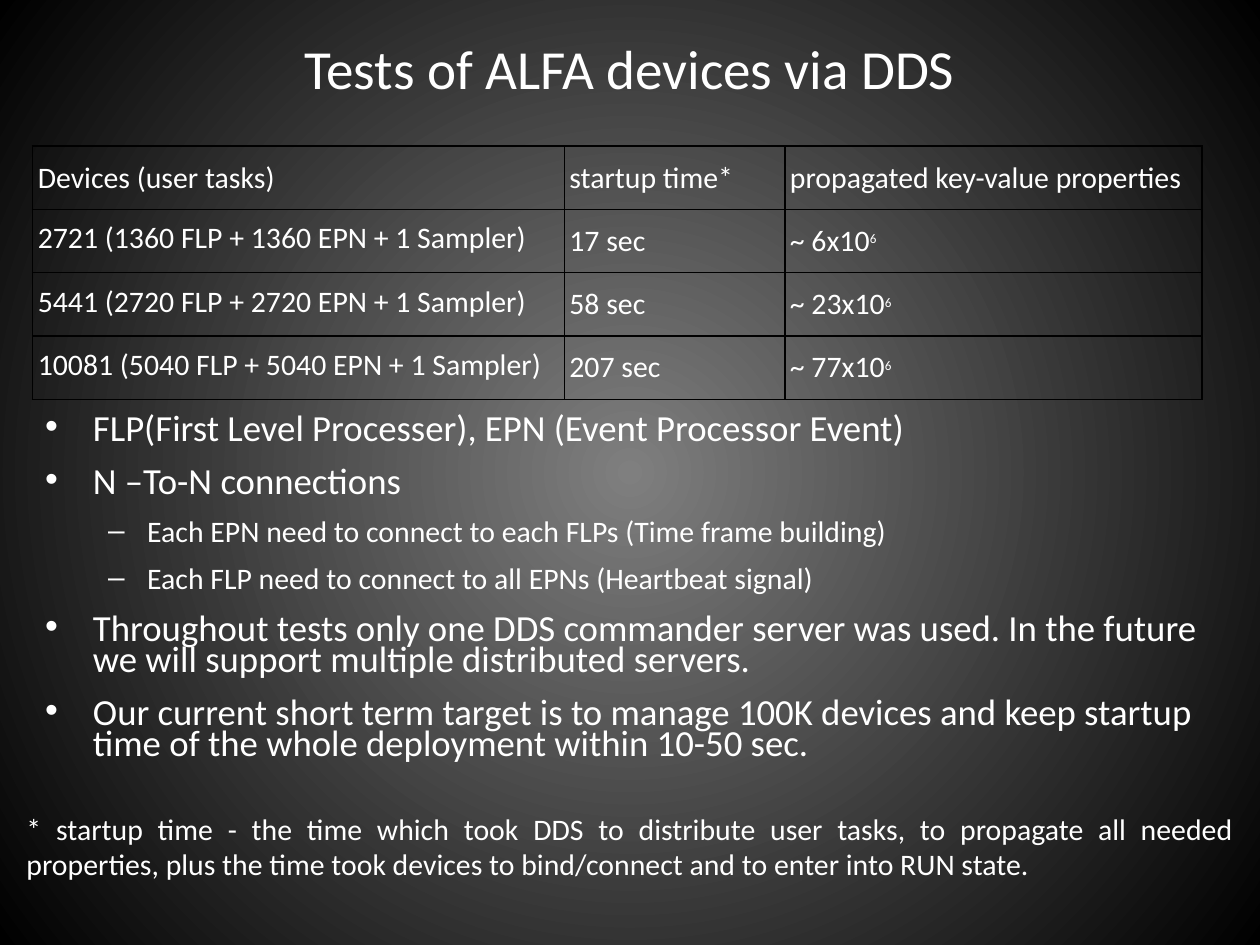
from lxml import etree
from pptx import Presentation
from pptx import util as u
from pptx.dml.color import RGBColor
from pptx.enum import text
from pptx.oxml import parse_xml
from pptx.oxml.ns import nsdecls, qn
from pptx.util import Inches

COLORS = {"text": "FFFFFF", "border": "000000", "glow": "7F7F7F", "edge": "000000"}
FONT = "Calibri"
BODY_SIZE, SMALL_SIZE, EXPONENT_SIZE = 21, 17, 13
TIGHT = 0.7

HEADERS = ["Devices (user tasks)", "startup time*", "propagated key-value properties"]
TESTS = [
    ("2721 (1360 FLP + 1360 EPN + 1 Sampler)", "17 sec", "~ 6x10"),
    ("5441 (2720 FLP + 2720 EPN + 1 Sampler)", "58 sec", "~ 23x10"),
    ("10081 (5040 FLP + 5040 EPN + 1 Sampler)", "207 sec", "~ 77x10"),
]
EXPONENT = "6"
COLUMN_WIDTHS = [4.22, 1.75, 3.31]

POINTS = [
    (0, "FLP(First Level Processer), EPN (Event Processor Event)"),
    (0, "N –To-N connections"),
    (1, "Each EPN need to connect to each FLPs (Time frame building)"),
    (1, "Each FLP need to connect to all EPNs (Heartbeat signal)"),
    (0, "Throughout tests only one DDS commander server was used. In the future "
        "we will support multiple distributed servers."),
    (0, "Our current short term target is to manage 100K devices and keep startup "
        "time of the whole deployment within 10-50 sec."),
]
# level: bullet, left margin, hanging indent, text size
LEVELS = [("•", 0.38, 0.38, BODY_SIZE), ("–", 0.81, 0.31, SMALL_SIZE)]

FOOTNOTE = ("* startup time - the time which took DDS to distribute user tasks, to propagate "
            "all needed properties, plus the time took devices to bind/connect and to enter "
            "into RUN state.")


def style_runs(paragraph, size):
    for run in paragraph.runs:
        run.font.name = FONT
        run.font.size = u.Pt(size)
        run.font.color.rgb = RGBColor.from_string(COLORS["text"])


def set_margins(holder, margin):
    holder.margin_left = holder.margin_right = Inches(margin)
    holder.margin_top = holder.margin_bottom = Inches(margin)


def add_frame(slide, box, anchor):
    """Add a wrapping text box at (left, top, width, height) and return its frame."""
    frame = slide.shapes.add_textbox(*map(Inches, box)).text_frame
    frame.word_wrap = True
    frame.vertical_anchor = anchor
    return frame


def paint_background(slide):
    fill = slide.background.fill
    fill.gradient()
    for stop, name in zip(fill.gradient_stops, ("glow", "edge")):
        stop.color.rgb = RGBColor.from_string(COLORS[name])
    gradient = slide.background._cSld.find(".//" + qn("a:gradFill"))
    linear = gradient.find(qn("a:lin"))
    gradient.replace(linear, parse_xml(
        f'<a:path {nsdecls("a")} path="circle">'
        '<a:fillToRect l="50000" t="50000" r="50000" b="50000"/></a:path>'))


def add_title(slide, box):
    frame = add_frame(slide, box, text.MSO_ANCHOR.MIDDLE)
    frame.text = "Tests of ALFA devices via DDS"
    title = frame.paragraphs[0]
    title.alignment = text.PP_ALIGN.CENTER
    style_runs(title, 31.5)


def add_borders(cell):
    properties = cell._tc.get_or_add_tcPr()
    for position, side in enumerate(("lnL", "lnR", "lnT", "lnB")):
        properties.insert(position, parse_xml(
            f'<a:{side} {nsdecls("a")} w="{u.Pt(1)}"><a:solidFill>'
            f'<a:srgbClr val="{COLORS["border"]}"/></a:solidFill></a:{side}>'))


def add_results(slide, box):
    rows = [HEADERS, *TESTS]
    table = slide.shapes.add_table(len(rows), len(HEADERS), *map(Inches, box)).table
    table.first_row = table.horz_banding = False
    for column, width in zip(table.columns, COLUMN_WIDTHS):
        column.width = Inches(width)
    for r, row in enumerate(rows):
        for c, wording in enumerate(row):
            cell = table.cell(r, c)
            cell.text = wording
            cell.vertical_anchor = text.MSO_ANCHOR.MIDDLE
            set_margins(cell, 0.04)
            cell.fill.background()
            add_borders(cell)
            entry = cell.text_frame.paragraphs[0]
            style_runs(entry, SMALL_SIZE)
            if r and c == 0:
                entry.line_spacing = TIGHT
            if r and c == 2:
                power = entry.add_run()
                power.text = EXPONENT
                style_runs(entry, SMALL_SIZE)
                power.font.size = u.Pt(EXPONENT_SIZE)
                power.font._element.set("baseline", "33000")


def add_points(slide, box):
    frame = add_frame(slide, box, text.MSO_ANCHOR.TOP)
    for i, (level, wording) in enumerate(POINTS):
        point = frame.add_paragraph() if i else frame.paragraphs[0]
        bullet, margin, hanging, size = LEVELS[level]
        point.text = wording
        point.level = level
        point.line_spacing = TIGHT
        if i:
            point.space_before = u.Pt(12.6)
        properties = point._p.get_or_add_pPr()
        properties.set("marL", str(Inches(margin)))
        properties.set("indent", str(-Inches(hanging)))
        etree.SubElement(properties, qn("a:buFont"), typeface="Arial")
        etree.SubElement(properties, qn("a:buChar"), char=bullet)
        style_runs(point, size)


def add_footnote(slide, box):
    frame = add_frame(slide, box, text.MSO_ANCHOR.MIDDLE)
    set_margins(frame, 0.04)
    frame.text = FOOTNOTE
    note = frame.paragraphs[0]
    note.alignment = text.PP_ALIGN.JUSTIFY
    style_runs(note, SMALL_SIZE)


def main():
    deck = Presentation()
    deck.slide_width, deck.slide_height = Inches(10), Inches(7.5)
    slide = deck.slides.add_slide(deck.slide_layouts[6])
    paint_background(slide)
    add_title(slide, (0.27, 0.2, 9.45, 0.67))
    add_results(slide, (0.26, 1.16, sum(COLUMN_WIDTHS), 2.01))
    add_points(slide, (0.26, 3.26, 9.57, 3.23))
    add_footnote(slide, (0.17, 6.39, 9.66, 0.65))
    deck.save("out.pptx")


if __name__ == "__main__":
    main()
